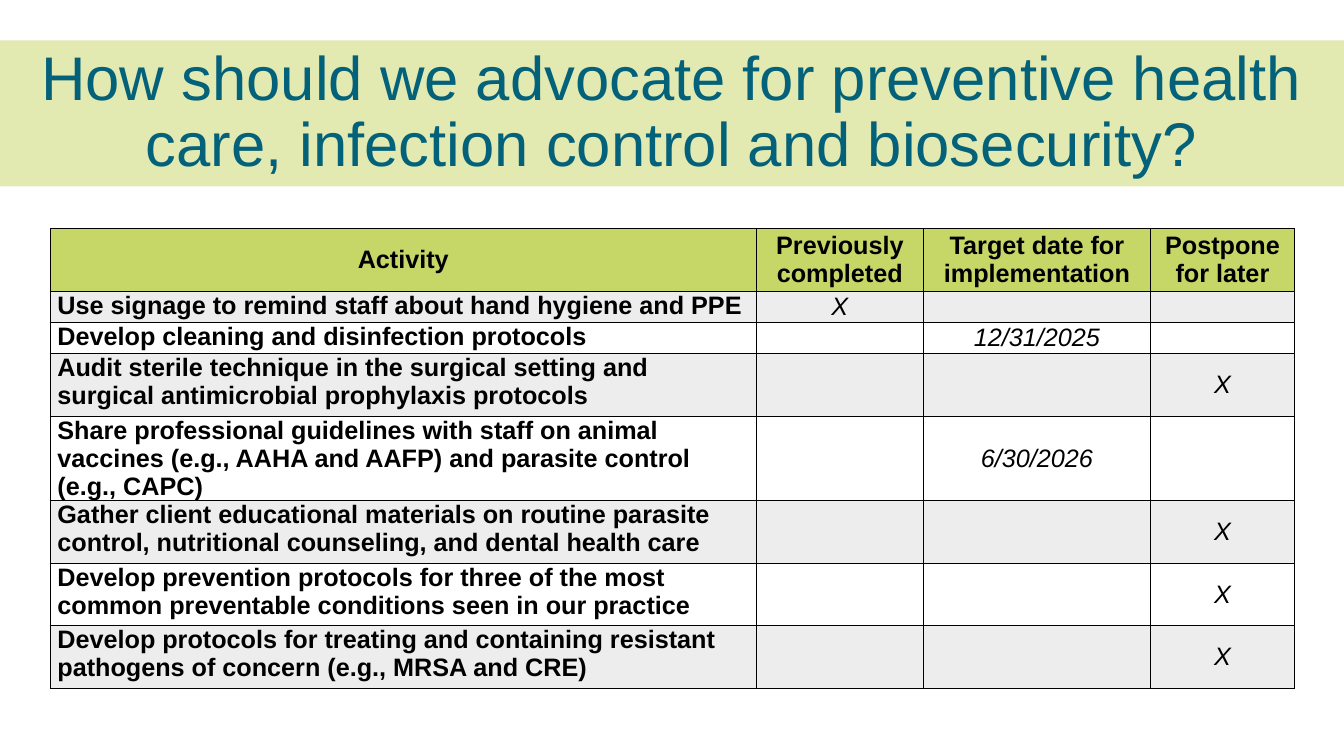
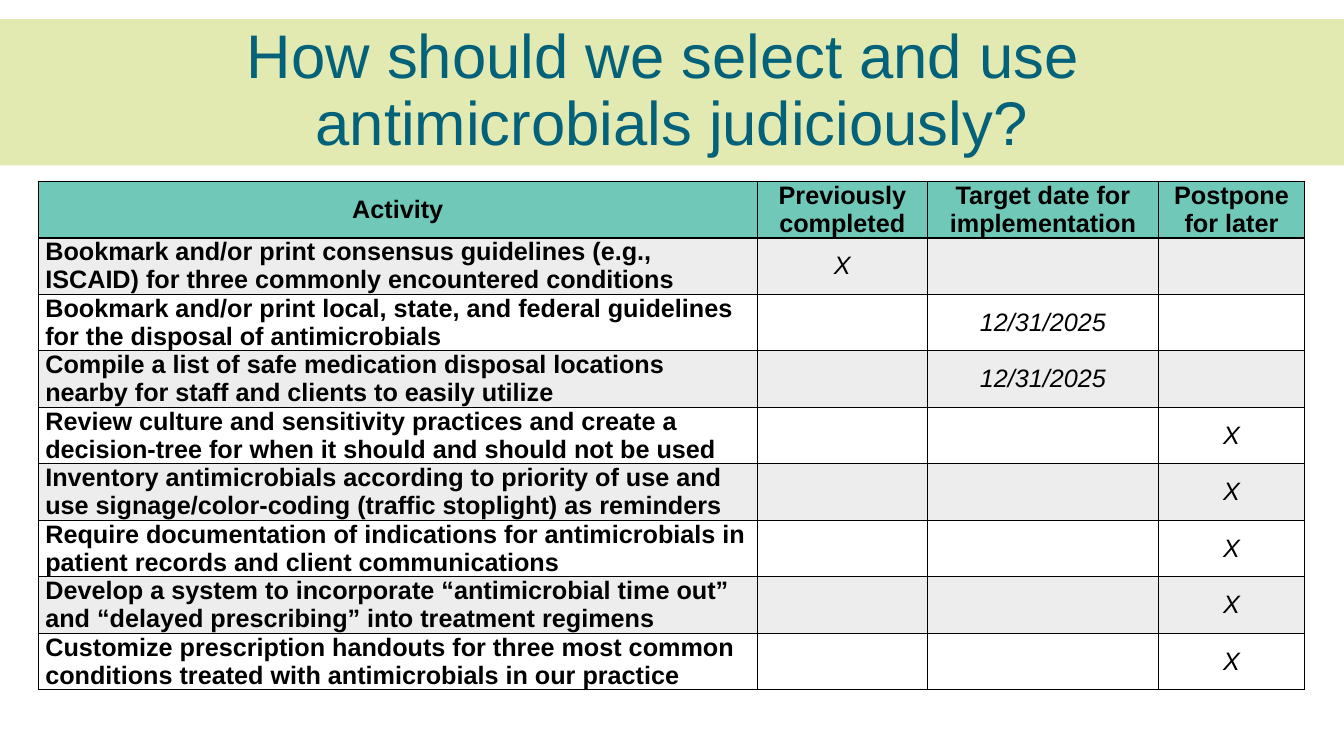
from lxml.etree import SubElement
from pptx import Presentation
from pptx.dml.color import RGBColor
from pptx.enum.text import MSO_ANCHOR, MSO_AUTO_SIZE, PP_ALIGN
from pptx.oxml import parse_xml
from pptx.oxml.ns import nsdecls, qn
from pptx.util import Inches, Pt

FONT = "Arial"
BLACK, TEAL, LIME, MINT, GRAY = "000000", "03617A", "C6D667", "70C8B8", "A5A5A5"
HEADERS = ["Activity", "Previously completed", "Target date for implementation", "Postpone for later"]
DONE, DATE, LATER = 1, 2, 3

SLIDES = [
    {
        "title": "How should we advocate for preventive health care, infection control and biosecurity?",
        "band_top": 0.4,
        "table_at": (0.5, 2.27),
        "cols": [7, 1.66, 2.25, 1.43],
        "heights": [0.62, 0.31, 0.31, 0.62, 0.84, 0.62, 0.62, 0.62],
        "header_fill": LIME,
        "rows": [
            ("Use signage to remind staff about hand hygiene and PPE", DONE, "X"),
            ("Develop cleaning and disinfection protocols", DATE, "12/31/2025"),
            ("Audit sterile technique in the surgical setting and surgical antimicrobial prophylaxis protocols", LATER, "X"),
            ("Share professional guidelines with staff on animal vaccines (e.g., AAHA and AAFP) and parasite control (e.g., CAPC)", DATE, "6/30/2026"),
            ("Gather client educational materials on routine parasite control, nutritional counseling, and dental health care", LATER, "X"),
            ("Develop prevention protocols for three of the most common preventable conditions seen in our practice", LATER, "X"),
            ("Develop protocols for treating and containing resistant pathogens of concern (e.g., MRSA and CRE)", LATER, "X"),
        ],
    },
    {
        "title": "How should we select and use \vantimicrobials judiciously?",
        "band_top": 0.19,
        "table_at": (0.38, 1.8),
        "cols": [7.13, 1.69, 2.29, 1.45],
        "heights": [0.56] * 9,
        "header_fill": MINT,
        "rows": [
            ("Bookmark and/or print consensus guidelines (e.g., ISCAID) for three commonly encountered conditions", DONE, "X"),
            ("Bookmark and/or print local, state, and federal guidelines for the disposal of antimicrobials", DATE, "12/31/2025"),
            ("Compile a list of safe medication disposal locations nearby for staff and clients to easily utilize", DATE, "12/31/2025"),
            ("Review culture and sensitivity practices and create a decision-tree for when it should and should not be used", LATER, "X"),
            ("Inventory antimicrobials according to priority of use and use signage/color-coding (traffic stoplight) as reminders", LATER, "X"),
            ("Require documentation of indications for antimicrobials in patient records and client communications", LATER, "X"),
            ("Develop a system to incorporate “antimicrobial time out” and “delayed prescribing” into treatment regimens", LATER, "X"),
            ("Customize prescription handouts for three most common conditions treated with antimicrobials in our practice", LATER, "X"),
        ],
    },
]


def rgb(value):
    return RGBColor.from_string(value)


def set_fill(fill, color, opacity=100):
    fill.solid()
    fill.fore_color.rgb = rgb(color)
    if opacity < 100:
        clr = fill._xPr.find(qn("a:solidFill"))[0]
        SubElement(clr, qn("a:alpha")).set("val", str(opacity * 1000))


def format_runs(p, size, color, bold=False, italic=False):
    for r in p.runs:
        r.font.name = FONT
        r.font.size = Pt(size)
        r.font.color.rgb = rgb(color)
        r.font.bold = bold
        r.font.italic = italic


def set_borders(cell):
    tcPr = cell._tc.get_or_add_tcPr()
    for i, side in enumerate(("lnL", "lnR", "lnT", "lnB")):
        tcPr.insert(i, parse_xml(
            f'<a:{side} {nsdecls("a")} w="{Pt(1)}"><a:solidFill>'
            f'<a:srgbClr val="{BLACK}"/></a:solidFill></a:{side}>'))


def add_title(slide, text, top):
    sp = slide.shapes.title
    sp.left, sp.top, sp.width, sp.height = 0, Inches(top), prs.slide_width, Inches(1.45)
    set_fill(sp.fill, LIME, 50)
    tf = sp.text_frame
    tf.text = text
    tf.word_wrap = True
    tf.auto_size = MSO_AUTO_SIZE.NONE
    tf.vertical_anchor = MSO_ANCHOR.MIDDLE
    p = tf.paragraphs[0]
    p.alignment = PP_ALIGN.CENTER
    p.line_spacing = 0.9
    format_runs(p, 44, TEAL)


def format_cell(cell, text, row, col, header_fill):
    header, activity = row == 0, col == 0
    cell.margin_left = cell.margin_right = Inches(0.07)
    cell.margin_top = cell.margin_bottom = 0
    top_left = activity and not header
    cell.vertical_anchor = MSO_ANCHOR.TOP if top_left else MSO_ANCHOR.MIDDLE
    if header:
        set_fill(cell.fill, header_fill)
    elif row % 2:
        set_fill(cell.fill, GRAY, 20)
    else:
        cell.fill.background()
    set_borders(cell)
    if text:
        cell.text_frame.text = text
        p = cell.text_frame.paragraphs[0]
        p.alignment = PP_ALIGN.LEFT if top_left else PP_ALIGN.CENTER
        bold = header or activity
        format_runs(p, 18, BLACK, bold=bold, italic=not bold)


def add_activity_table(slide, data):
    grid = [HEADERS]
    for activity, col, mark in data["rows"]:
        grid.append([activity] + [mark if c == col else "" for c in (DONE, DATE, LATER)])
    left, top = data["table_at"]
    cols, heights = data["cols"], data["heights"]
    table = slide.shapes.add_table(
        len(grid), len(cols), Inches(left), Inches(top),
        Inches(sum(cols)), Inches(sum(heights))).table
    table.first_row = table.horz_banding = False
    for column, width in zip(table.columns, cols):
        column.width = Inches(width)
    for i, (texts, height) in enumerate(zip(grid, heights)):
        table.rows[i].height = Inches(height)
        for j, text in enumerate(texts):
            format_cell(table.cell(i, j), text, i, j, data["header_fill"])


prs = Presentation()
prs.slide_width, prs.slide_height = Inches(13.33), Inches(7.5)
for data in SLIDES:
    slide = prs.slides.add_slide(prs.slide_layouts[5])
    add_title(slide, data["title"], data["band_top"])
    add_activity_table(slide, data)
prs.save("out.pptx")
